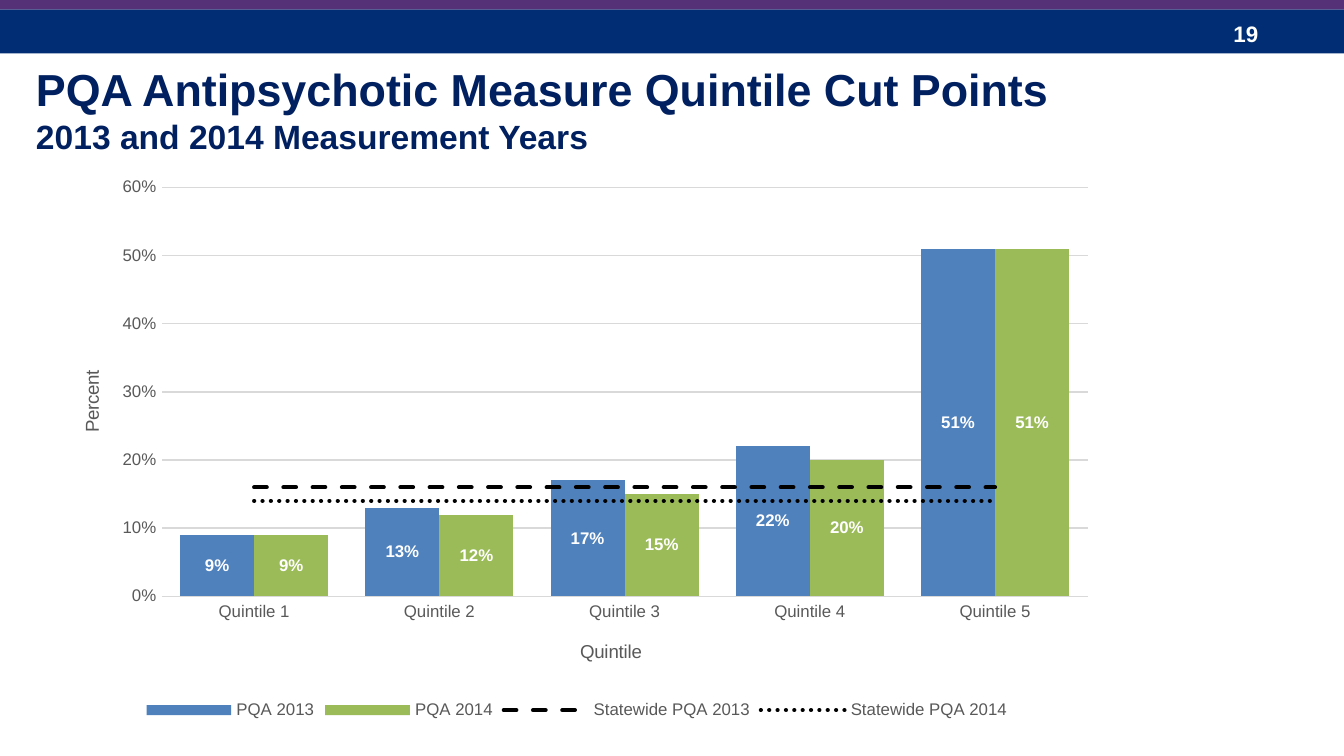
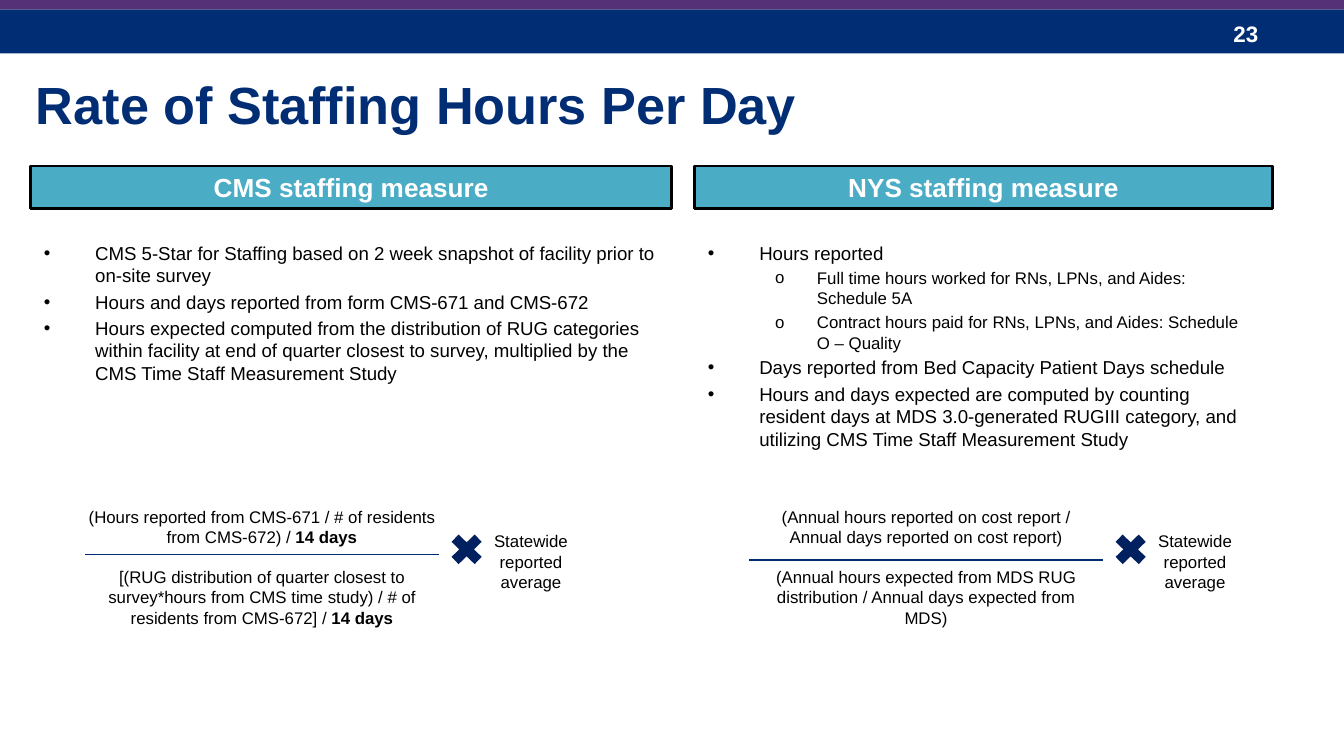
import pptx
import pptx.chart.data
import pptx.dml.color
import pptx.enum.chart
import pptx.enum.dml
import pptx.enum.shapes
import pptx.enum.text
import pptx.oxml
import pptx.oxml.ns
import pptx.util
from lxml import etree

Cm = pptx.util.Cm
Pt = pptx.util.Pt
qn = pptx.oxml.ns.qn
RGBColor = pptx.dml.color.RGBColor
SHAPE = pptx.enum.shapes.MSO_SHAPE
ALIGN = pptx.enum.text.PP_ALIGN
ANCHOR = pptx.enum.text.MSO_ANCHOR

NAVY = RGBColor(0x00, 0x2D, 0x73)
DEEP_NAVY = RGBColor(0x00, 0x20, 0x60)
PURPLE = RGBColor(0x55, 0x32, 0x78)
TEAL = RGBColor(0x4B, 0xAC, 0xC6)
BLUE = RGBColor(0x4F, 0x81, 0xBD)
GREEN = RGBColor(0x9B, 0xBB, 0x59)
GREY = RGBColor(0x59, 0x59, 0x59)
PALE_GREY = RGBColor(0xD9, 0xD9, 0xD9)
BLACK = RGBColor(0x00, 0x00, 0x00)
WHITE = RGBColor(0xFF, 0xFF, 0xFF)

FONT = "Arial"
SLIDE_WIDTH, SLIDE_HEIGHT = 25.4, 14.29
TITLE_ONLY, TWO_CONTENT = 5, 3
BULLETS = {0: ("•", 0.97, -0.97), 1: ("o", 2.06, -0.79)}


def apply(target, formats):
    """Set every attribute in formats on target."""
    for name, value in formats.items():
        setattr(target, name, value)


def style_font(font, color, size, bold=False):
    """Give a font the deck typeface, colour, size and weight."""
    apply(font, {"name": FONT, "size": Pt(size), "bold": bold})
    font.color.rgb = color


def place(shape, box):
    """Move a shape to a (left, top, width, height) box in centimetres."""
    names = ("left", "top", "width", "height")
    apply(shape, dict(zip(names, map(Cm, box))))


def write(frame, lines, color, align=ALIGN.LEFT, anchor=ANCHOR.TOP):
    """Fill a frame with paragraphs made of (text, size, bold) runs."""
    apply(frame, {
        "word_wrap": True,
        "auto_size": pptx.enum.text.MSO_AUTO_SIZE.NONE,
        "vertical_anchor": anchor,
        "margin_left": Cm(0.25), "margin_right": Cm(0.25),
        "margin_top": Cm(0.13), "margin_bottom": Cm(0.13),
    })
    for index, runs in enumerate(lines):
        paragraph = frame.add_paragraph() if index else frame.paragraphs[0]
        apply(paragraph, {"alignment": align, "space_before": Pt(0)})
        for text, size, bold in runs:
            run = paragraph.add_run()
            run.text = text
            style_font(run.font, color, size, bold)


def add_block(slide, kind, box, fill, outline=None):
    """Add a flat preset shape with an optional outline."""
    block = slide.shapes.add_shape(kind, *map(Cm, box))
    block.shadow.inherit = False
    block.fill.solid()
    block.fill.fore_color.rgb = fill
    if outline is None:
        block.line.fill.background()
    else:
        block.line.color.rgb = outline
        block.line.width = Pt(1.5)
    return block


def add_text(slide, box, lines, color, **layout):
    """Add a text box holding the given lines."""
    note = slide.shapes.add_textbox(*map(Cm, box))
    write(note.text_frame, lines, color, **layout)
    return note.text_frame


def start_slide(deck, layout, number, title_box, title_lines, color, anchor):
    """Add a slide with bands, page number and title."""
    slide = deck.slides.add_slide(deck.slide_layouts[layout])
    add_block(slide, SHAPE.RECTANGLE, (0, 0.18, SLIDE_WIDTH, 0.83), NAVY)
    add_block(slide, SHAPE.RECTANGLE, (0, 0, SLIDE_WIDTH, 0.18), PURPLE)
    add_text(slide, (23.06, 0.25, 1.9, 0.76), [[(number, 12, True)]], WHITE,
             anchor=ANCHOR.MIDDLE)
    place(slide.shapes.title, title_box)
    write(slide.shapes.title.text_frame, title_lines, color, anchor=anchor)
    return slide


def pin(parent, **fractions):
    """Fix a chart part at fractions of the chart area."""
    layout = parent.find(qn("c:layout"))
    if layout is None:
        layout = parent.makeelement(qn("c:layout"))
        parent.insert(0 if parent.tag == qn("c:plotArea") else 1, layout)
    manual = etree.SubElement(layout, qn("c:manualLayout"))
    settings = {"xMode": "edge", "yMode": "edge", **fractions}
    if "w" in fractions:
        settings = {"layoutTarget": "inner", **settings}
    for name, value in settings.items():
        etree.SubElement(manual, qn(f"c:{name}")).set("val", str(value))


def turn_into_lines(chart, first):
    """Move the series from index first on into a line plot on the same axes."""
    bars = chart.element.find(".//" + qn("c:barChart"))
    lines = bars.makeelement(qn("c:lineChart"))
    bars.addnext(lines)
    etree.SubElement(lines, qn("c:grouping")).set("val", "standard")
    etree.SubElement(lines, qn("c:varyColors")).set("val", "0")
    for series in bars.findall(qn("c:ser"))[first:]:
        for bar_setting in series.findall(qn("c:invertIfNegative")):
            series.remove(bar_setting)
        lines.append(series)
    etree.SubElement(lines, qn("c:marker")).set("val", "1")
    for axis in bars.findall(qn("c:axId")):
        etree.SubElement(lines, qn("c:axId")).set("val", axis.get("val"))


def style_axis(axis, name, x, y, rotation):
    """Format an axis and its title."""
    tick = pptx.enum.chart.XL_TICK_MARK.NONE
    apply(axis, {"major_tick_mark": tick, "minor_tick_mark": tick})
    style_font(axis.tick_labels.font, GREY, 9)
    frame = axis.axis_title.text_frame
    frame.text = name
    style_font(frame.paragraphs[0].runs[0].font, GREY, 10)
    title = axis.axis_title.element
    title.find(".//" + qn("a:bodyPr")).set("rot", str(rotation))
    pin(title, x=x, y=y)


def add_quintile_chart(slide, box):
    """Add the quintile columns with the statewide lines."""
    data = pptx.chart.data.CategoryChartData(number_format="0%")
    data.categories = [f"Quintile {rank}" for rank in range(1, 6)]
    data.add_series("PQA 2013", (0.09, 0.13, 0.17, 0.22, 0.51))
    data.add_series("PQA 2014", (0.09, 0.12, 0.15, 0.2, 0.51))
    data.add_series("Statewide PQA 2013", [0.16] * 5)
    data.add_series("Statewide PQA 2014", [0.14] * 5)
    kind = pptx.enum.chart.XL_CHART_TYPE.COLUMN_CLUSTERED
    chart = slide.shapes.add_chart(kind, *map(Cm, box), data).chart
    style_font(chart.font, BLACK, 10)
    apply(chart, {"has_title": False, "has_legend": True})
    apply(chart.legend, {
        "position": pptx.enum.chart.XL_LEGEND_POSITION.BOTTOM,
        "include_in_layout": False,
    })
    style_font(chart.legend.font, GREY, 9)

    turn_into_lines(chart, 2)
    columns, statewide = chart.plots
    apply(columns, {"gap_width": 50, "overlap": 0, "vary_by_categories": False})
    for series, color in zip(columns.series, (BLUE, GREEN)):
        series.format.fill.solid()
        series.format.fill.fore_color.rgb = color
        apply(series.data_labels, {
            "show_value": True,
            "number_format": "0%",
            "number_format_is_linked": False,
            "position": pptx.enum.chart.XL_LABEL_POSITION.CENTER,
        })
        style_font(series.data_labels.font, WHITE, 9, True)
    dashes = pptx.enum.dml.MSO_LINE
    for series, dash in zip(statewide.series, (dashes.DASH, dashes.ROUND_DOT)):
        series.smooth = False
        series.marker.style = pptx.enum.chart.XL_MARKER_STYLE.NONE
        series.format.line.color.rgb = BLACK
        apply(series.format.line, {"width": Pt(2.25), "dash_style": dash})
    for stroke in chart.element.iterfind(
            f".//{qn('c:lineChart')}/{qn('c:ser')}/{qn('c:spPr')}/{qn('a:ln')}"):
        stroke.set("cap", "rnd")

    quintile, percent = chart.category_axis, chart.value_axis
    style_axis(quintile, "Quintile", 0.5, 0.84, 0)
    style_axis(percent, "Percent", 0.03, 0.36, -5400000)
    apply(percent, {"minimum_scale": 0, "maximum_scale": 0.6,
                    "major_unit": 0.1, "has_major_gridlines": True})
    apply(percent.tick_labels,
          {"number_format": "0%", "number_format_is_linked": False})
    percent.format.line.fill.background()
    for rule in (quintile.format.line, percent.major_gridlines.format.line):
        rule.color.rgb = PALE_GREY
        rule.width = Pt(0.75)
    pin(chart.element.find(".//" + qn("c:plotArea")),
        x=0.11, y=0.04, w=0.87, h=0.73)


def fill_bullets(body, box, items):
    """Fill a body placeholder with (level, text) bullets."""
    place(body, box)
    lines = [[(text, 9 if level else 10, False)] for level, text in items]
    write(body.text_frame, lines, BLACK)
    for index, (level, _) in enumerate(items):
        paragraph = body.text_frame.paragraphs[index]
        apply(paragraph, {"level": level, "space_before": Pt(2 if index else 0)})
        mark, margin, indent = BULLETS[level]
        properties = paragraph._p.get_or_add_pPr()
        properties.set("marL", str(Cm(margin)))
        properties.set("indent", str(Cm(indent)))
        etree.SubElement(properties, qn("a:buChar")).set("char", mark)


def add_measure(slide, body, box, heading, items, body_width, formula,
                formula_width, bar_drop):
    """Place a heading, its bullets and the rate formula in a column box."""
    left, top, width, height = box
    banner = add_block(slide, SHAPE.RECTANGLE, (left, top, width, 0.8), TEAL, BLACK)
    write(banner.text_frame, [[(heading, 14, True)]], WHITE,
          ALIGN.CENTER, ANCHOR.MIDDLE)
    fill_bullets(body, (left, top + 1.3, body_width, 3.81), items)

    middle, formula_top = left + 4.37, top + height - 2.59
    fraction = add_text(
        slide, (middle - formula_width / 2, formula_top, formula_width, 2.57),
        formula, BLACK, align=ALIGN.CENTER)
    fraction.paragraphs[1].space_before = Pt(10.5)
    add_block(slide, SHAPE.MATH_MINUS,
              (middle - 4.55, formula_top + bar_drop, 9.1, 0.13), NAVY)
    add_block(slide, SHAPE.MATH_MULTIPLY,
              (left + 7.82, formula_top + 0.53, 0.84, 0.81), DEEP_NAVY)
    add_text(slide, (left + 8.49, formula_top + 0.46, 1.93, 1.42),
             [[("Statewide reported average", 9, False)]], BLACK,
             align=ALIGN.CENTER)


def build_cut_points(deck):
    """Build the quintile cut point slide."""
    slide = start_slide(
        deck, TITLE_ONLY, "19", (0.43, 1.04, 24.33, 1.47),
        [[("PQA Antipsychotic Measure Quintile Cut Points", 24, True)],
         [("2013 and 2014 Measurement Years", 18, True)]],
        DEEP_NAVY, ANCHOR.TOP)
    add_quintile_chart(slide, (0.84, 3.12, 20.12, 10.59))


def build_staffing(deck):
    """Build the staffing rate comparison slide."""
    slide = start_slide(
        deck, TWO_CONTENT, "23", (0.43, 1.22, 20.96, 1.47),
        [[("Rate of Staffing Hours Per Day", 28, True)]], NAVY, ANCHOR.MIDDLE)
    cms_body, nys_body = slide.placeholders[1], slide.placeholders[2]
    add_measure(
        slide, cms_body, (0.58, 3.14, 12.12, 8.9), "CMS staffing measure",
        [(0, "CMS 5-Star for Staffing based on 2 week snapshot of facility prior to on-site survey"),
         (0, "Hours and days reported from form CMS-671 and CMS-672"),
         (0, "Hours expected computed from the distribution of RUG categories within facility "
             "at end of quarter closest to survey, multiplied by the CMS Time Staff Measurement Study")],
        12.12,
        [[("(Hours reported from CMS-671 / # of residents from CMS-672) / ", 9, False),
          ("14 days", 9, True)],
         [("[(RUG distribution of quarter closest to survey*hours from CMS time study) / "
           "# of residents from CMS-672] / ", 9, False),
          ("14 days", 9, True)]],
        7.42, 0.97)
    add_measure(
        slide, nys_body, (13.13, 3.14, 10.92, 8.9), "NYS staffing measure",
        [(0, "Hours reported"),
         (1, "Full time hours worked for RNs, LPNs, and Aides: Schedule 5A"),
         (1, "Contract hours paid for RNs, LPNs, and Aides: Schedule O – Quality"),
         (0, "Days reported from Bed Capacity Patient Days schedule"),
         (0, "Hours and days expected are computed by counting resident days at MDS "
             "3.0-generated RUGIII category, and utilizing CMS Time Staff Measurement Study")],
        10.8,
        [[("(Annual hours reported on cost report / Annual days reported on cost report)", 9, False)],
         [("(Annual hours expected from MDS RUG distribution / Annual days expected from MDS)", 9, False)]],
        6.88, 1.07)


def main():
    """Build and save the deck."""
    deck = pptx.Presentation()
    apply(deck, {"slide_width": Cm(SLIDE_WIDTH), "slide_height": Cm(SLIDE_HEIGHT)})
    build_cut_points(deck)
    build_staffing(deck)
    deck.save("out.pptx")


if __name__ == "__main__":
    main()
